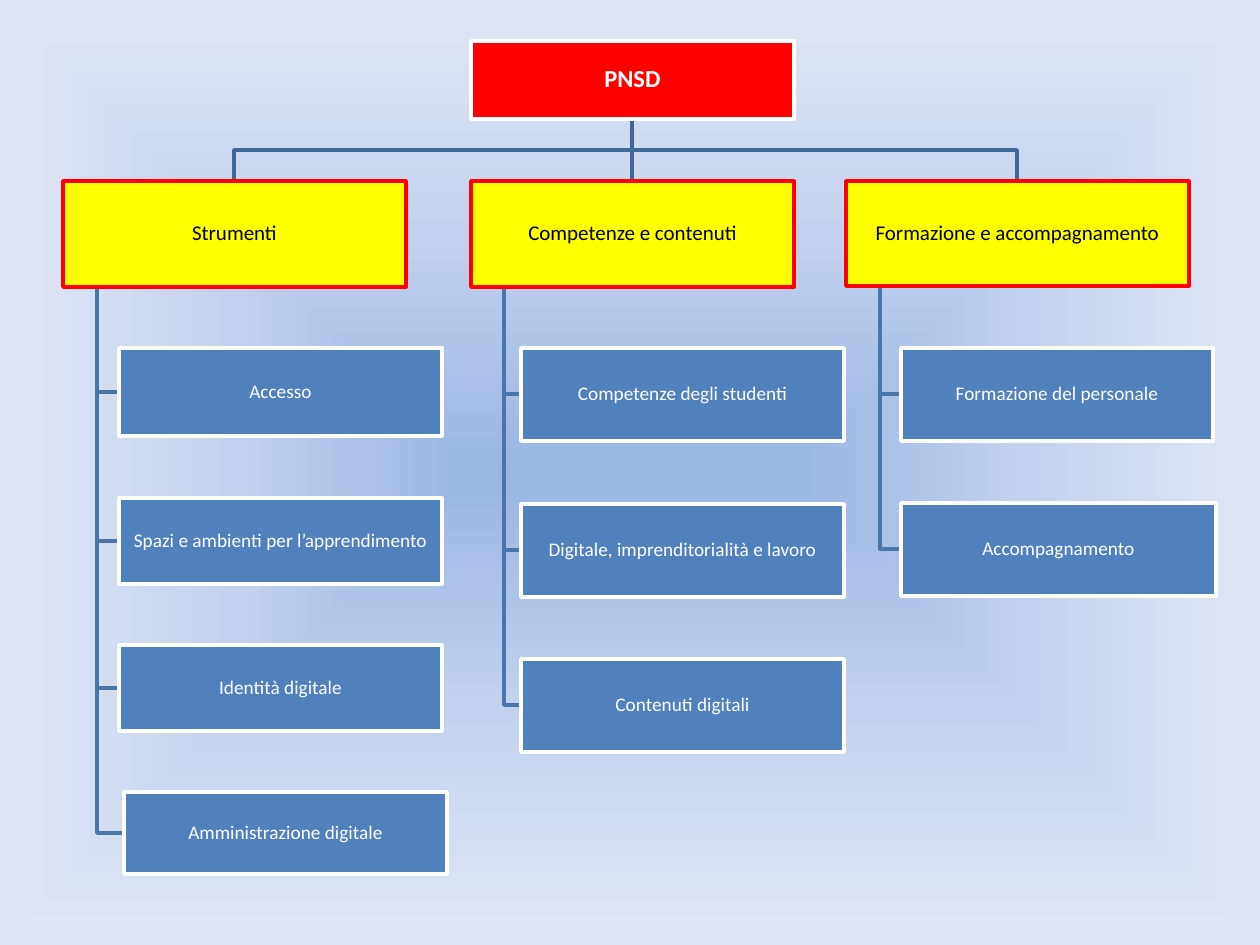
import pptx
import pptx.util
import pptx.dml.color
import pptx.enum.shapes
import pptx.enum.text
import lxml.etree

PX = 914400 / 126


def rgb(color):
    return pptx.dml.color.RGBColor.from_string(color)


def fill_box(sp, text, box, size, fill, line, color):
    sp.left, sp.top, sp.width, sp.height = [round(v * PX) for v in box]
    sp.fill.solid()
    sp.fill.fore_color.rgb = rgb(fill)
    sp.line.color.rgb = rgb(line)
    sp.line.width = pptx.util.Pt(2)
    tf = sp.text_frame
    tf.text = text
    tf.word_wrap = True
    tf.auto_size = pptx.enum.text.MSO_AUTO_SIZE.NONE
    tf.vertical_anchor = pptx.enum.text.MSO_ANCHOR.MIDDLE
    tf.margin_left = tf.margin_right = tf.margin_top = tf.margin_bottom = round(PX)
    p = tf.paragraphs[0]
    p.alignment = pptx.enum.text.PP_ALIGN.CENTER
    p.line_spacing = 0.9
    r = p.runs[0]
    r.font.name = "Calibri"
    r.font.size = pptx.util.Pt(size)
    r.font.color.rgb = rgb(color)
    r.font.bold = size == 14


prs = pptx.Presentation()
prs.slide_width = round(1260 * PX)
prs.slide_height = round(945 * PX)
s = prs.slides.add_slide(prs.slide_layouts[5])

s.background.fill.solid()
bg = s.background.fill._xPr
stops = "".join(
    f'<a:gs pos="{pos}"><a:srgbClr val="{color}"/></a:gs>'
    for pos, color in [(0, "9AB5E4"), (50000, "C2D1ED"), (100000, "E1E8F5")]
)
bg.replace(bg[0], lxml.etree.fromstring(
    '<a:gradFill xmlns:a="http://schemas.openxmlformats.org/drawingml/2006/main" rotWithShape="1">'
    f'<a:gsLst>{stops}</a:gsLst><a:path path="shape">'
    '<a:fillToRect l="50000" t="50000" r="50000" b="50000"/></a:path></a:gradFill>'
))

columns = [
    ("Strumenti", (63, 181, 343, 106), 97, [
        ("Accesso", (119, 348, 323, 88)),
        ("Spazi e ambienti per l’apprendimento", (119, 498, 323, 86)),
        ("Identità digitale", (119, 645, 323, 86)),
        ("Amministrazione digitale", (124, 792, 323, 82)),
    ]),
    ("Competenze e contenuti", (471, 181, 323, 106), 504, [
        ("Competenze degli studenti", (521, 348, 323, 93)),
        ("Digitale, imprenditorialità e lavoro", (521, 504, 323, 93)),
        ("Contenuti digitali", (521, 659, 323, 93)),
    ]),
    ("Formazione e accompagnamento", (846, 181, 343, 105), 880, [
        ("Formazione del personale", (901, 348, 312, 93)),
        ("Accompagnamento", (901, 503, 315, 93)),
    ]),
]

fill_box(s.shapes.title, "PNSD", (471, 41, 323, 78), 14, "FF0000", "FFFFFF", "FFFFFF")

links = []
for name, (x, y, w, h), trunk, items in columns:
    mid = x + w // 2
    links.append(("3F6797", [(632, 121), (632, 150), (mid, 150), (mid, y)]))
    for text, (left, top, width, height) in items:
        center = top + height // 2
        links.append(("4875AC", [(trunk, y + h), (trunk, center), (left, center)]))

for color, points in links:
    fb = s.shapes.build_freeform(*points[0], scale=PX)
    fb.add_line_segments(points[1:], close=False)
    sp = fb.convert_to_shape()
    sp.shadow.inherit = False
    sp.fill.background()
    sp.line.color.rgb = rgb(color)
    sp.line.width = pptx.util.Pt(2)

for name, head, trunk, items in columns:
    boxes = [(name, head, 12, "FFFF00", "FF0000", "000000")]
    boxes += [(text, box, 11, "4F81BD", "FFFFFF", "FFFFFF") for text, box in items]
    for box in boxes:
        sp = s.shapes.add_shape(pptx.enum.shapes.MSO_SHAPE.RECTANGLE, 0, 0, 0, 0)
        sp.shadow.inherit = False
        fill_box(sp, *box)

prs.save("out.pptx")
